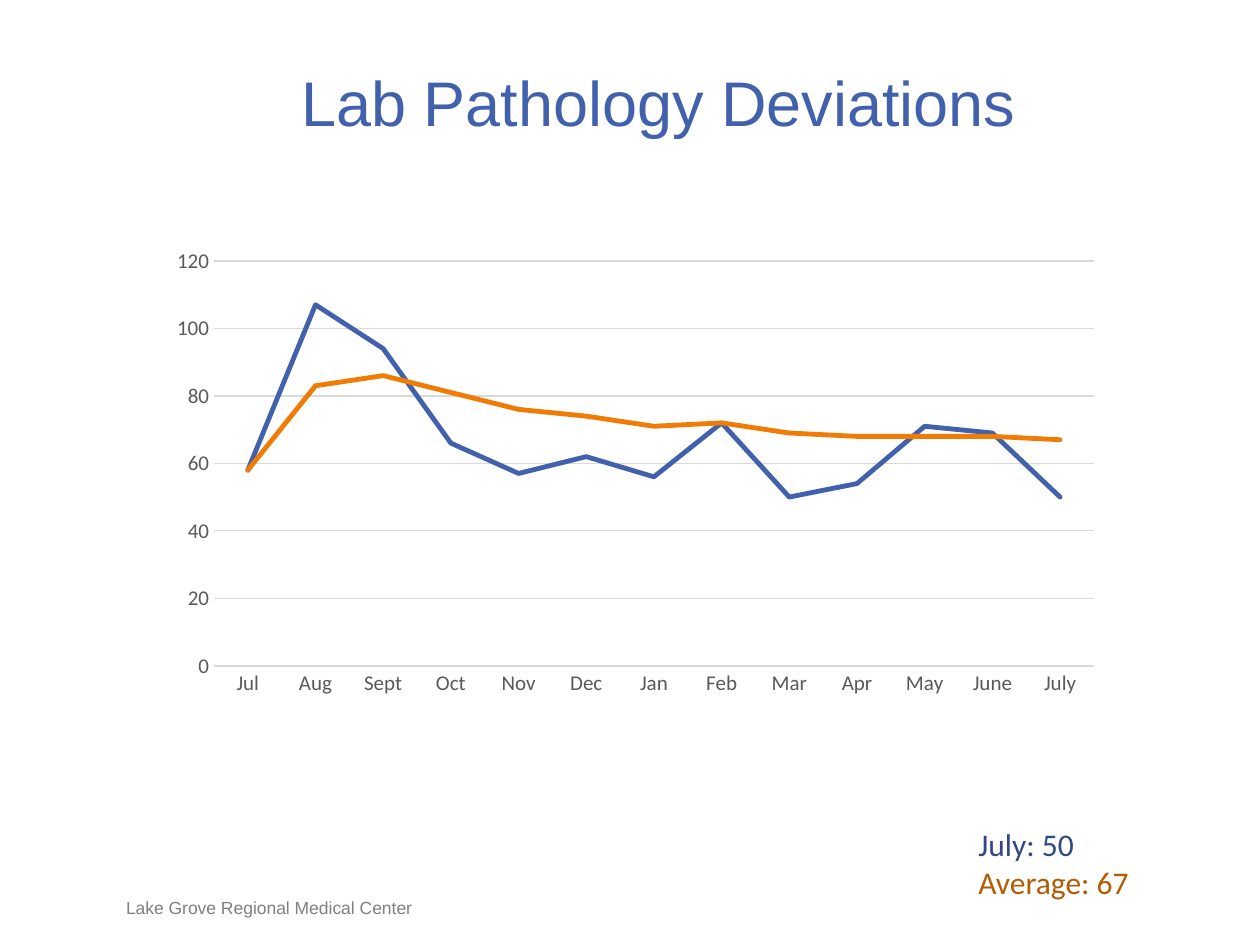
from lxml.etree import SubElement
from pptx import Presentation
from pptx.chart.data import CategoryChartData
from pptx.dml.color import RGBColor
from pptx.enum.chart import XL_CHART_TYPE, XL_TICK_MARK
from pptx.enum.text import MSO_ANCHOR, MSO_AUTO_SIZE, PP_ALIGN
from pptx.oxml.ns import qn
from pptx.util import Emu, Pt

COLORS = {
    "blue": "4261AD",
    "orange": "F07B05",
    "dark_blue": "314982",
    "dark_orange": "B45C04",
    "footer": "808080",
    "axis_text": "595959",
    "grid": "D9D9D9",
}
TITLE = "Lab Pathology Deviations"
FOOTER = "Lake Grove Regional Medical Center"
SUMMARY = [("July: 50", "dark_blue"), ("Average: 67", "dark_orange")]
MONTHS = ["Jul", "Aug", "Sept", "Oct", "Nov", "Dec", "Jan",
          "Feb", "Mar", "Apr", "May", "June", "July"]
DEVIATIONS = [
    ("Series 1", [58, 107, 94, 66, 57, 62, 56, 72, 50, 54, 71, 69, 50], "blue"),
    ("Series 2", [58, 83, 86, 81, 76, 74, 71, 72, 69, 68, 68, 68, 67], "orange"),
]
SLIDE_SIZE = (1260, 945)
TITLE_BOX = (123, 63, 1071, 77)
CHART_BOX = (157, 239, 955, 466)
PLOT_BOX = (214, 261, 880, 405)
SUMMARY_BOX = (966, 819, 252, 89)
FOOTER_BOX = (126, 897, 399, 21)


def px(*lengths):
    return [Emu(round(length * 914400 / 126)) for length in lengths]


def rgb(color):
    return RGBColor.from_string(COLORS[color])


def write(frame, lines, size, font, align=PP_ALIGN.LEFT, anchor=MSO_ANCHOR.TOP,
          margin=None):
    frame.word_wrap = True
    frame.auto_size = MSO_AUTO_SIZE.NONE
    frame.vertical_anchor = anchor
    if margin is not None:
        frame.margin_left = frame.margin_right = margin
        frame.margin_top = frame.margin_bottom = margin
    for index, (text, color) in enumerate(lines):
        paragraph = frame.paragraphs[0] if index == 0 else frame.add_paragraph()
        paragraph.alignment = align
        run = paragraph.add_run()
        run.text = text
        run.font.size = Pt(size)
        run.font.name = font
        run.font.color.rgb = rgb(color)


def style_axis(axis):
    axis.major_tick_mark = axis.minor_tick_mark = XL_TICK_MARK.NONE
    axis.tick_labels.font.size = Pt(12)
    axis.tick_labels.font.name = "Calibri"
    axis.tick_labels.font.color.rgb = rgb("axis_text")


def place_plot(chart):
    plot_area = chart.element.find(qn("c:chart")).find(qn("c:plotArea"))
    layout = plot_area.find(qn("c:layout"))
    if layout is None:
        layout = SubElement(plot_area, qn("c:layout"))
        plot_area.insert(0, layout)
    manual = SubElement(layout, qn("c:manualLayout"))
    left, top, width, height = CHART_BOX
    plot_left, plot_top, plot_width, plot_height = PLOT_BOX
    for tag, value in [("layoutTarget", "inner"), ("xMode", "edge"), ("yMode", "edge"),
                       ("x", (plot_left - left) / width), ("y", (plot_top - top) / height),
                       ("w", plot_width / width), ("h", plot_height / height)]:
        SubElement(manual, qn(f"c:{tag}")).set("val", str(value))


def add_deviations(slide):
    data = CategoryChartData()
    data.categories = MONTHS
    for name, values, _ in DEVIATIONS:
        data.add_series(name, values)
    chart = slide.shapes.add_chart(XL_CHART_TYPE.LINE, *px(*CHART_BOX), data).chart
    chart.has_legend = False
    chart.has_title = False
    chart.font.size = Pt(10)
    chart.font.name = "Calibri"
    chart.plots[0].vary_by_categories = False
    for series, (_, _, color) in zip(chart.plots[0].series, DEVIATIONS):
        series.smooth = False
        series.format.line.color.rgb = rgb(color)
        series.format.line.width = Pt(2.75)
        series.format.line._get_or_add_ln().set("cap", "rnd")

    months, counts = chart.category_axis, chart.value_axis
    for axis in (months, counts):
        style_axis(axis)
    months.format.line.color.rgb = rgb("grid")
    months.format.line.width = Pt(1)
    counts.format.line.fill.background()
    counts.minimum_scale, counts.maximum_scale, counts.major_unit = 0, 120, 20
    counts.has_major_gridlines = True
    counts.major_gridlines.format.line.color.rgb = rgb("grid")
    counts.major_gridlines.format.line.width = Pt(0.75)
    place_plot(chart)


def main():
    deck = Presentation()
    deck.slide_width, deck.slide_height = px(*SLIDE_SIZE)
    slide = deck.slides.add_slide(deck.slide_layouts[5])

    footer = slide.shapes.add_textbox(*px(*FOOTER_BOX))
    write(footer.text_frame, [(FOOTER, "footer")], size=10, font="Arial",
          anchor=MSO_ANCHOR.BOTTOM, margin=0)

    title = slide.shapes.title
    title.left, title.top, title.width, title.height = px(*TITLE_BOX)
    write(title.text_frame, [(TITLE, "blue")], size=36, font="Arial",
          align=PP_ALIGN.CENTER, margin=0)

    summary = slide.shapes.add_textbox(*px(*SUMMARY_BOX))
    write(summary.text_frame, SUMMARY, size=18, font="Calibri")
    add_deviations(slide)
    deck.save("out.pptx")


if __name__ == "__main__":
    main()
